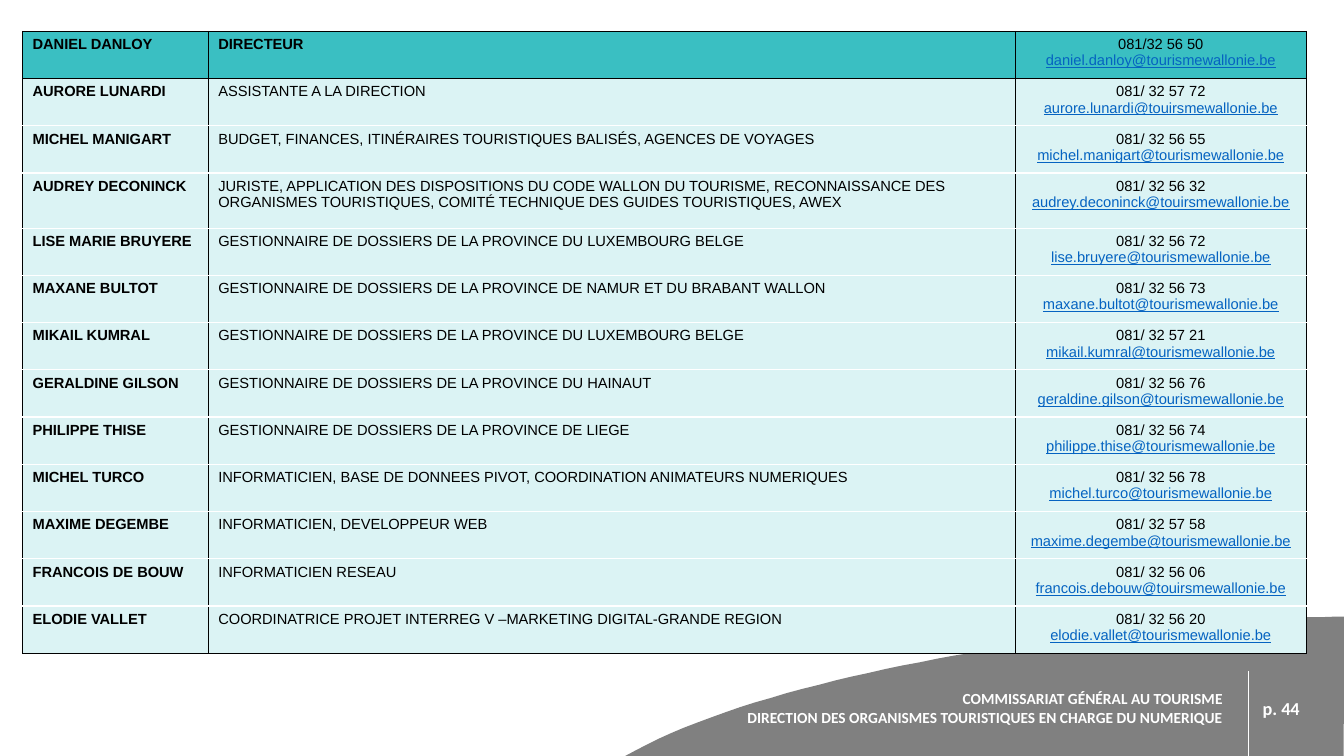
from lxml import etree
from pptx import Presentation
from pptx.dml.color import RGBColor
from pptx.enum import shapes, text
from pptx.oxml.ns import qn
from pptx.util import Cm, Pt

BLACK = RGBColor(0x00, 0x00, 0x00)
WHITE = RGBColor(0xFF, 0xFF, 0xFF)
GREY = RGBColor(0x80, 0x80, 0x80)
TEAL = RGBColor(0x3A, 0xBF, 0xC2)
PALE = RGBColor(0xDB, 0xF3, 0xF4)
LINK = RGBColor(0x05, 0x63, 0xC1)

COL_WIDTHS = (4.68, 20.34, 7.33)
ROW_HEIGHT, TALL_ROW_HEIGHT, TALL_ROW = 1.19, 1.39, 3

STAFF = [
    ("DANIEL DANLOY", "DIRECTEUR", "081/32 56 50", "daniel.danloy@tourismewallonie.be"),
    ("AURORE LUNARDI", "ASSISTANTE A LA DIRECTION",
     "081/ 32 57 72", "aurore.lunardi@touirsmewallonie.be"),
    ("MICHEL MANIGART", "BUDGET, FINANCES, ITINÉRAIRES TOURISTIQUES BALISÉS, AGENCES DE VOYAGES",
     "081/ 32 56 55", "michel.manigart@tourismewallonie.be"),
    ("AUDREY DECONINCK", "JURISTE, APPLICATION DES DISPOSITIONS DU CODE WALLON DU TOURISME, "
     "RECONNAISSANCE DES ORGANISMES TOURISTIQUES, COMITÉ TECHNIQUE DES GUIDES TOURISTIQUES, AWEX",
     "081/ 32 56 32", "audrey.deconinck@touirsmewallonie.be"),
    ("LISE MARIE BRUYERE", "GESTIONNAIRE DE DOSSIERS DE LA PROVINCE DU LUXEMBOURG BELGE",
     "081/ 32 56 72", "lise.bruyere@tourismewallonie.be"),
    ("MAXANE BULTOT", "GESTIONNAIRE DE DOSSIERS DE LA PROVINCE DE NAMUR ET DU BRABANT WALLON",
     "081/ 32 56 73", "maxane.bultot@tourismewallonie.be"),
    ("MIKAIL KUMRAL", "GESTIONNAIRE DE DOSSIERS DE LA PROVINCE DU LUXEMBOURG BELGE",
     "081/ 32 57 21", "mikail.kumral@tourismewallonie.be"),
    ("GERALDINE GILSON", "GESTIONNAIRE DE DOSSIERS DE LA PROVINCE DU HAINAUT",
     "081/ 32 56 76", "geraldine.gilson@tourismewallonie.be"),
    ("PHILIPPE THISE", "GESTIONNAIRE DE DOSSIERS DE LA PROVINCE DE LIEGE",
     "081/ 32 56 74", "philippe.thise@tourismewallonie.be"),
    ("MICHEL TURCO", "INFORMATICIEN, BASE DE DONNEES PIVOT, COORDINATION ANIMATEURS NUMERIQUES",
     "081/ 32 56 78", "michel.turco@tourismewallonie.be"),
    ("MAXIME DEGEMBE", "INFORMATICIEN, DEVELOPPEUR WEB",
     "081/ 32 57 58", "maxime.degembe@tourismewallonie.be"),
    ("FRANCOIS DE BOUW", "INFORMATICIEN RESEAU",
     "081/ 32 56 06", "francois.debouw@touirsmewallonie.be"),
    ("ELODIE VALLET", "COORDINATRICE PROJET INTERREG V –MARKETING DIGITAL-GRANDE REGION",
     "081/ 32 56 20", "elodie.vallet@tourismewallonie.be"),
]


def add_run(p, wording, font, size, color, bold=False, underline=False):
    r = p.add_run()
    r.text = wording
    r.font.name, r.font.size = font, Pt(size)
    r.font.bold, r.font.underline = bold, underline
    r.font.color.rgb = color


def add_footer_text(s, left, width, lines, size, align):
    sp = s.shapes.add_textbox(Cm(left), Cm(16.92), Cm(width), Cm(1.83))
    tf = sp.text_frame
    tf.word_wrap = True
    tf.vertical_anchor = text.MSO_ANCHOR.MIDDLE
    for i, line in enumerate(lines):
        p = tf.paragraphs[0] if i == 0 else tf.add_paragraph()
        p.alignment = align
        p._p.get_or_add_pPr().set("marL", str(Cm(1.27)))
        add_run(p, line, "Calibri", size, WHITE, bold=True)


def bezier(points, steps=48):
    """Return points along a cubic curve given by its four control points."""
    curve = []
    for i in range(1, steps + 1):
        t = i / steps
        weights = ((1 - t) ** 3, 3 * t * (1 - t) ** 2, 3 * t * t * (1 - t), t ** 3)
        curve.append(tuple(round(sum(w * pt[k] for w, pt in zip(weights, points)))
                           for k in (0, 1)))
    return curve


def add_wave(s):
    """Draw the grey footer; its coordinates are hundredths of a centimetre."""
    start = (1572, 1907)
    fb = s.shapes.build_freeform(*start, scale=Cm(0.01))
    fb.add_line_segments(bezier((start, (2002, 1659), (2992, 1554), (3388, 1554)))
                         + [(3386, 1907)], close=True)
    sp = fb.convert_to_shape()
    sp.shadow.inherit = False
    sp.fill.solid()
    sp.fill.fore_color.rgb = GREY
    sp.line.fill.background()


def add_divider(s):
    line = s.shapes.add_connector(shapes.MSO_CONNECTOR.STRAIGHT,
                                  Cm(31.45), Cm(16.92), Cm(31.45), Cm(19.05))
    line.line.color.rgb = WHITE
    line.line.width = Pt(0.5)
    etree.SubElement(line._element.spPr, qn("a:effectLst"))


def set_borders(cell, top, bottom):
    tcPr = cell._tc.get_or_add_tcPr()
    for side, color in (("L", BLACK), ("R", BLACK), ("T", top), ("B", bottom)):
        ln = etree.SubElement(tcPr, qn("a:ln" + side), w=str(Pt(1)))
        fill = etree.SubElement(ln, qn("a:solidFill"))
        etree.SubElement(fill, qn("a:srgbClr"), val=str(color))


def add_staff_table(s):
    heights = [TALL_ROW_HEIGHT if i == TALL_ROW else ROW_HEIGHT for i in range(len(STAFF))]
    table = s.shapes.add_table(len(STAFF), len(COL_WIDTHS), Cm(0.57), Cm(0.79),
                               Cm(sum(COL_WIDTHS)), Cm(sum(heights))).table
    table.first_row = table.horz_banding = False
    for column, width in zip(table.columns, COL_WIDTHS):
        column.width = Cm(width)
    for i, (name, role, phone, email) in enumerate(STAFF):
        table.rows[i].height = Cm(heights[i])
        cells = [table.cell(i, j) for j in range(len(COL_WIDTHS))]
        for cell in cells:
            set_borders(cell, BLACK if i < 2 else WHITE,
                        BLACK if i in (0, len(STAFF) - 1) else WHITE)
            cell.fill.solid()
            cell.fill.fore_color.rgb = TEAL if i == 0 else PALE
        name_p, role_p, phone_p = (c.text_frame.paragraphs[0] for c in cells)
        email_p = cells[2].text_frame.add_paragraph()
        phone_p.alignment = email_p.alignment = text.PP_ALIGN.CENTER
        add_run(name_p, name, "Arial", 10.5, BLACK, bold=True)
        add_run(role_p, role, "Arial", 10.5, BLACK, bold=i == 0)
        add_run(phone_p, phone, "Arial", 10.5, BLACK)
        add_run(email_p, email, "Arial", 10.5, LINK, underline=True)


def main():
    prs = Presentation()
    prs.slide_width, prs.slide_height = Cm(33.87), Cm(19.05)
    s = prs.slides.add_slide(prs.slide_layouts[6])
    add_wave(s)
    add_footer_text(s, 17.22, 13.85,
                    ["COMMISSARIAT GÉNÉRAL AU TOURISME",
                     "DIRECTION DES ORGANISMES TOURISTIQUES EN CHARGE DU NUMERIQUE"],
                    11, text.PP_ALIGN.RIGHT)
    add_divider(s)
    add_footer_text(s, 30.3, 2.92, ["p. 44"], 13, text.PP_ALIGN.LEFT)
    add_staff_table(s)
    prs.save("out.pptx")


if __name__ == "__main__":
    main()
